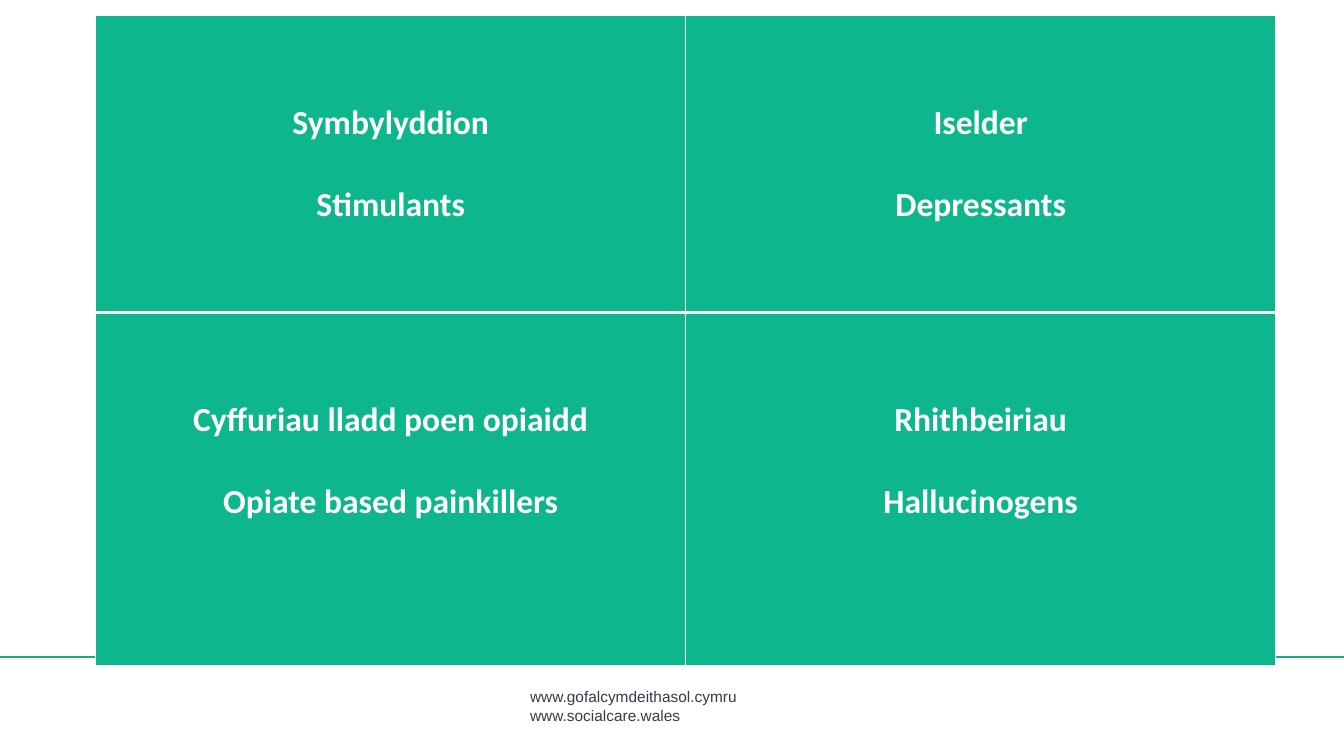
from lxml.etree import SubElement
from pptx import Presentation
from pptx.dml.color import RGBColor
from pptx.enum.shapes import MSO_CONNECTOR
from pptx.enum.text import PP_ALIGN
from pptx.oxml.ns import qn
from pptx.util import Pt

COLORS = {"cell": "0DB68D", "rule": "16AD85", "footer": "37394C", "white": "FFFFFF"}
DRUG_TYPES = [
    [("Symbylyddion", "Stimulants"), ("Iselder", "Depressants")],
    [("Cyffuriau lladd poen opiaidd", "Opiate based painkillers"),
     ("Rhithbeiriau", "Hallucinogens")],
]
ROW_HEIGHTS = [212.4, 252]
COL_WIDTH = 421.4
LINE_HEIGHT = 29.3


def rgb(name):
    return RGBColor.from_string(COLORS[name])


def add_lines(tf, lines, font, size, color, bold=False, align=PP_ALIGN.LEFT, gap=0):
    for i, text in enumerate(lines):
        p = tf.paragraphs[0] if i == 0 else tf.add_paragraph()
        p.alignment = align
        if i and gap:
            p.space_before = Pt(gap)
        r = p.add_run()
        r.text = text
        r.font.name = font
        r.font.size = Pt(size)
        r.font.bold = bold
        r.font.color.rgb = rgb(color)


def set_borders(cell, widths):
    tcPr = cell._tc.get_or_add_tcPr()
    for side, width in widths.items():
        ln = SubElement(tcPr, qn(f"a:ln{side}"), w=str(Pt(width)))
        fill = SubElement(ln, qn("a:solidFill"))
        SubElement(fill, qn("a:srgbClr"), val=COLORS["white"])


def add_rule(s, y, width):
    line = s.shapes.add_connector(MSO_CONNECTOR.STRAIGHT, 0, Pt(y), width, Pt(y))
    line.line.color.rgb = rgb("rule")
    line.line.width = Pt(1)
    SubElement(line._element.spPr, qn("a:effectLst"))


def add_footer(s):
    tf = s.shapes.add_textbox(Pt(371.5), Pt(487.4), Pt(217.4), Pt(33.1)).text_frame
    tf.word_wrap = True
    add_lines(tf, ["www.gofalcymdeithasol.cymru", "www.socialcare.wales"],
              "Arial", 11, "footer")


def add_drug_table(s):
    table = s.shapes.add_table(2, 2, Pt(68.4), Pt(10.8), Pt(2 * COL_WIDTH),
                               Pt(sum(ROW_HEIGHTS))).table
    for col in table.columns:
        col.width = Pt(COL_WIDTH)
    for i, row in enumerate(DRUG_TYPES):
        table.rows[i].height = Pt(ROW_HEIGHTS[i])
        for j, names in enumerate(row):
            cell = table.cell(i, j)
            cell.margin_top = Pt(3.6 + 2 * LINE_HEIGHT)
            set_borders(cell, {"L": 1, "R": 1, "T": 3 if i else 1, "B": 1 if i else 3})
            cell.fill.solid()
            cell.fill.fore_color.rgb = rgb("cell")
            add_lines(cell.text_frame, names, "Calibri", 24, "white", True,
                      PP_ALIGN.CENTER, LINE_HEIGHT)


def main():
    prs = Presentation()
    prs.slide_width, prs.slide_height = Pt(960), Pt(540)
    s = prs.slides.add_slide(prs.slide_layouts[6])
    add_footer(s)
    add_rule(s, 469.2, prs.slide_width)
    add_drug_table(s)
    prs.save("out.pptx")


if __name__ == "__main__":
    main()
